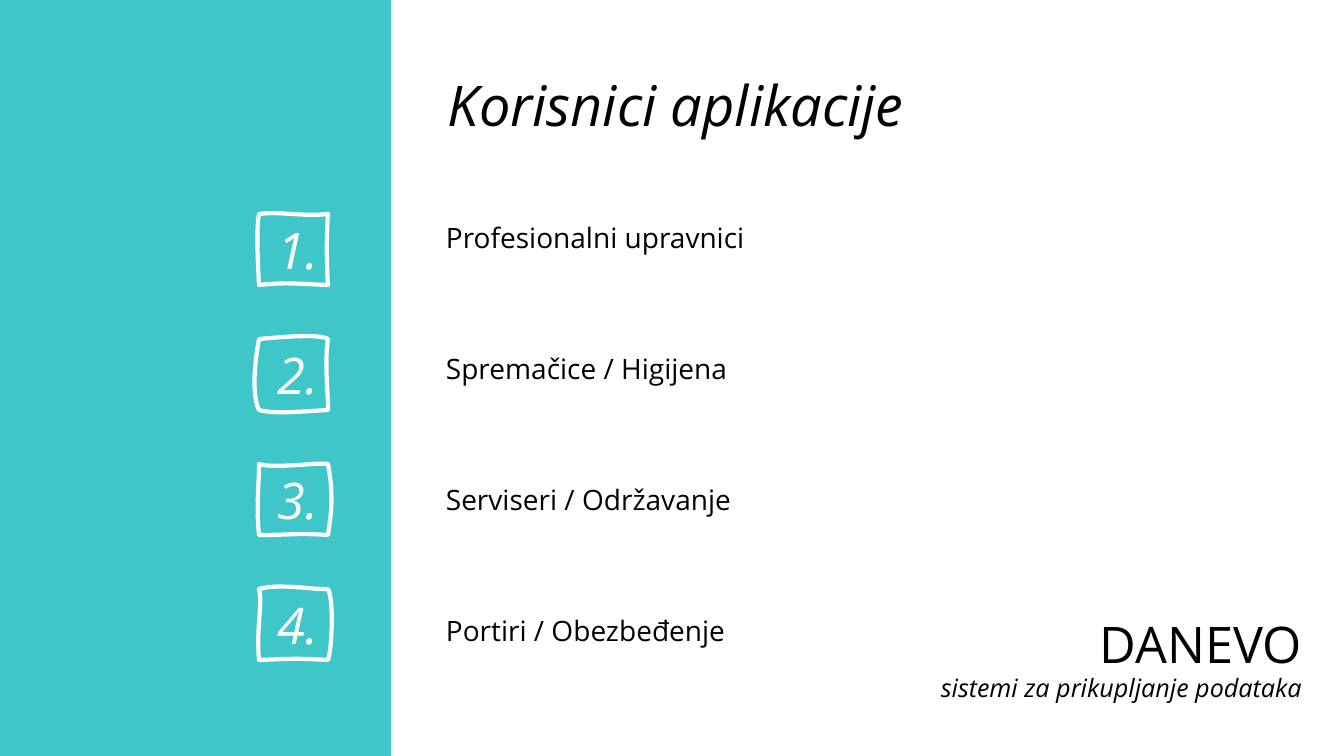
from lxml import etree
from pptx import Presentation
from pptx.dml.color import RGBColor
from pptx.enum.shapes import MSO_SHAPE
from pptx.enum.text import MSO_ANCHOR, PP_ALIGN
from pptx.oxml.ns import qn
from pptx.util import Pt

RECT = MSO_SHAPE.RECTANGLE
TOP, MIDDLE, BOTTOM = MSO_ANCHOR.TOP, MSO_ANCHOR.MIDDLE, MSO_ANCHOR.BOTTOM
LEFT, RIGHT = PP_ALIGN.LEFT, PP_ALIGN.RIGHT
FONT = "Open Sans"
TEAL, WHITE, BLACK = "3FC6C9", "FFFFFF", "000000"
PX_PER_INCH = 100.8

TITLE = "Korisnici aplikacije"
BRAND = "DANEVO"
TAGLINE = "sistemi za prikupljanje podataka"

# Each user group: label, then two control points for every side of its
# hand-drawn box (top, right, bottom, left), in px from the box corner.
USERS = [
    ("Profesionalni upravnici",
     [((21, -3), (43, 3)), ((67, 26), (68, 59)),
      ((39, 70), (27, 68)), ((-1, 50), (-3, 17))]),
    ("Spremačice / Higijena",
     [((13, -1), (59, -6)), ((65, 26), (70, 64)),
      ((37, 73), (14, 75)), ((-6, 59), (-6, 33))]),
    ("Serviseri / Održavanje",
     [((14, 5), (61, -2)), ((75, 32), (72, 51)),
      ((38, 69), (32, 71)), ((-3, 40), (0, 24))]),
    ("Portiri / Obezbeđenje",
     [((21, -6), (55, 1)), ((75, 10), (73, 60)),
      ((35, 69), (29, 70)), ((-3, 37), (4, 16))]),
]
BOX_X, BOX_Y, BOX_W, BOX_H, BOX_PITCH = 259, 214, 69, 71, 125
LABEL_X, LABEL_Y, LABEL_W, LABEL_H, LABEL_PITCH = 436, 215, 332, 44, 131


def px(n):
    return round(n * 914400 / PX_PER_INCH)


def rgb(color):
    return RGBColor.from_string(color)


def write(sp, text, size, color=BLACK, italic=False, align=LEFT, anchor=MIDDLE):
    tf = sp.text_frame
    tf.word_wrap = True
    tf.vertical_anchor = anchor
    p = tf.paragraphs[0]
    p.alignment = align
    r = p.add_run()
    r.text = text
    r.font.name = FONT
    r.font.size = Pt(size)
    r.font.italic = italic
    r.font.color.rgb = rgb(color)
    return p


def outline(sp, width):
    sp.shadow.inherit = False
    sp.fill.background()
    sp.line.color.rgb = rgb(WHITE)
    sp.line.width = Pt(width)


def add_label(slide, x, y, w, h, text, size, italic=False):
    sp = slide.shapes.add_shape(RECT, px(x), px(y), px(w), px(h))
    outline(sp, 0.75)
    write(sp, text, size, italic=italic)


def add_brand_text(slide, y, h, text, size, italic, anchor):
    sp = slide.shapes.add_textbox(px(589), px(y), px(723), px(h))
    write(sp, text, size, italic=italic, align=RIGHT, anchor=anchor).line_spacing = 0.9


def bend_sides(sp, corners, sides):
    """Turn the straight sides of a freeform into cubic curves."""
    outline_path = sp._element.spPr.find(".//" + qn("a:path"))
    for line in outline_path.findall(qn("a:lnTo")):
        outline_path.remove(line)
    close = outline_path.find(qn("a:close"))
    for (c1, c2), end in zip(sides, corners[1:] + corners[:1]):
        curve = etree.Element(qn("a:cubicBezTo"))
        for x, y in (c1, c2, end):
            etree.SubElement(curve, qn("a:pt"), x=str(px(x)), y=str(px(y)))
        close.addprevious(curve)


def add_number_box(slide, y, sides, text):
    corners = [(0, 0), (BOX_W, 0), (BOX_W, BOX_H), (0, BOX_H)]
    builder = slide.shapes.build_freeform(px(BOX_X), px(y))
    builder.add_line_segments([(px(BOX_X + dx), px(y + dy)) for dx, dy in corners[1:]])
    sp = builder.convert_to_shape()
    bend_sides(sp, corners, sides)
    outline(sp, 3)
    write(sp, text, 36, WHITE, True, RIGHT)


def main():
    prs = Presentation()
    prs.slide_width, prs.slide_height = px(1344), px(756)
    slide = prs.slides.add_slide(prs.slide_layouts[6])

    add_brand_text(slide, 577, 102, BRAND, 36, False, BOTTOM)
    add_brand_text(slide, 671, 71, TAGLINE, 18, True, TOP)

    band = slide.shapes.add_shape(RECT, 0, 0, px(391), px(756))
    band.shadow.inherit = False
    band.fill.solid()
    band.fill.fore_color.rgb = rgb(TEAL)
    band.line.fill.background()

    add_label(slide, 438, 65, 631, 78, TITLE, 40, italic=True)
    for i, (label, sides) in enumerate(USERS):
        add_number_box(slide, BOX_Y + i * BOX_PITCH, sides, f"{i + 1}.")
        add_label(slide, LABEL_X, LABEL_Y + i * LABEL_PITCH, LABEL_W, LABEL_H, label, 20)

    prs.save("out.pptx")


if __name__ == "__main__":
    main()
